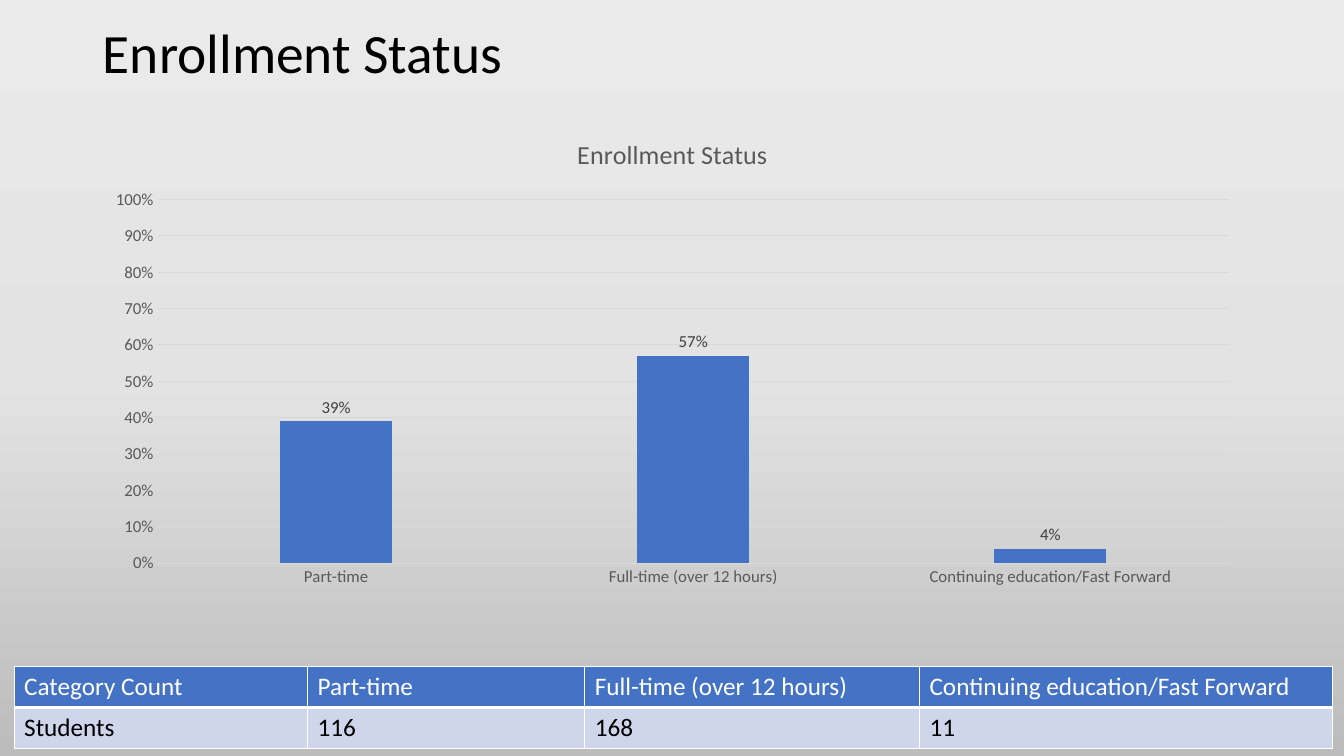
import pptx
import pptx.chart.data
import pptx.dml.color
import pptx.enum.chart
import pptx.enum.text
import pptx.oxml
import pptx.oxml.ns
import pptx.util

Inches = pptx.util.Inches
Pt = pptx.util.Pt
RGBColor = pptx.dml.color.RGBColor

FONT = "Calibri"
BLACK = RGBColor(0x00, 0x00, 0x00)
WHITE = RGBColor(0xFF, 0xFF, 0xFF)
BLUE = RGBColor(0x44, 0x72, 0xC4)
PALE_BLUE = RGBColor(0xCF, 0xD5, 0xEA)
GRID_GRAY = RGBColor(0xD9, 0xD9, 0xD9)
AXIS_GRAY = RGBColor(0x59, 0x59, 0x59)
LABEL_GRAY = RGBColor(0x40, 0x40, 0x40)
BACKGROUND_STOPS = [
    (0, RGBColor(0xEB, 0xEA, 0xEA)),
    (50, RGBColor(0xE4, 0xE3, 0xE3)),
    (100, RGBColor(0xBD, 0xBC, 0xBC)),
]

STATUSES = ["Part-time", "Full-time (over 12 hours)", "Continuing education/Fast Forward"]
SHARES = [0.39, 0.57, 0.04]
COUNTS = [116, 168, 11]


class EnrollmentSlide:
    """Holds the current slide and draws its elements in one style."""

    def __init__(self, presentation):
        self.slide = presentation.slides.add_slide(presentation.slide_layouts[5])

    def style(self, font, size, color):
        font.name = FONT
        font.size = Pt(size)
        font.bold = False
        font.color.rgb = color

    def background(self, stops):
        fill = self.slide.background.fill
        fill.gradient()
        fill.gradient_angle = 270
        ns = pptx.oxml.ns.nsdecls("a")
        marks = "".join(
            f'<a:gs pos="{percent * 1000}"><a:srgbClr val="{color}"/></a:gs>'
            for percent, color in stops
        )
        stop_list = next(self.slide.element.iter(pptx.oxml.ns.qn("a:gsLst")))
        stop_list.getparent().replace(
            stop_list, pptx.oxml.parse_xml(f"<a:gsLst {ns}>{marks}</a:gsLst>")
        )

    def title(self, text, left, top, width, height):
        heading = self.slide.shapes.title
        heading.left, heading.top = Inches(left), Inches(top)
        heading.width, heading.height = Inches(width), Inches(height)
        frame = heading.text_frame
        frame.text = text
        frame.auto_size = pptx.enum.text.MSO_AUTO_SIZE.NONE
        frame.vertical_anchor = pptx.enum.text.MSO_ANCHOR.MIDDLE
        paragraph = frame.paragraphs[0]
        paragraph.alignment = pptx.enum.text.PP_ALIGN.LEFT
        paragraph.line_spacing = 0.9
        self.style(paragraph.runs[0].font, 39.6, BLACK)

    def column_chart(self, title, categories, values, left, top, width, height):
        data = pptx.chart.data.CategoryChartData(number_format="0%")
        data.categories = categories
        data.add_series("Series 1", values)
        chart = self.slide.shapes.add_chart(
            pptx.enum.chart.XL_CHART_TYPE.COLUMN_CLUSTERED,
            Inches(left), Inches(top), Inches(width), Inches(height), data,
        ).chart
        self.style(chart.font, 10, BLACK)
        chart.has_legend = False
        chart.has_title = True
        chart.chart_title.include_in_layout = False
        chart.chart_title.text_frame.text = title
        title_run = chart.chart_title.text_frame.paragraphs[0].runs[0]
        self.style(title_run.font, 18.6, AXIS_GRAY)

        for axis in (chart.category_axis, chart.value_axis):
            axis.major_tick_mark = pptx.enum.chart.XL_TICK_MARK.NONE
            axis.minor_tick_mark = pptx.enum.chart.XL_TICK_MARK.NONE
            self.style(axis.tick_labels.font, 12, AXIS_GRAY)
        share_axis = chart.value_axis
        share_axis.minimum_scale, share_axis.maximum_scale = 0, 1
        share_axis.major_unit = 0.1
        share_axis.tick_labels.number_format = "0%"
        share_axis.tick_labels.number_format_is_linked = False
        share_axis.format.line.fill.background()
        for line in (chart.category_axis.format.line, share_axis.major_gridlines.format.line):
            line.color.rgb = GRID_GRAY
            line.width = Pt(0.75)

        plot = chart.plots[0]
        plot.gap_width, plot.overlap = 219, -27
        plot.vary_by_categories = False
        series = plot.series[0]
        series.format.fill.solid()
        series.format.fill.fore_color.rgb = BLUE
        labels = series.data_labels
        labels.show_value = True
        labels.number_format = "0%"
        labels.number_format_is_linked = False
        labels.position = pptx.enum.chart.XL_LABEL_POSITION.OUTSIDE_END
        self.style(labels.font, 12, LABEL_GRAY)

    def borders(self, cell, bottom):
        ns = pptx.oxml.ns.nsdecls("a")
        properties = cell._tc.get_or_add_tcPr()
        for index, (side, width) in enumerate(zip("LRTB", (1, 1, 1, bottom))):
            properties.insert(index, pptx.oxml.parse_xml(
                f'<a:ln{side} {ns} w="{Pt(width)}"><a:solidFill>'
                f'<a:srgbClr val="{WHITE}"/></a:solidFill></a:ln{side}>'
            ))

    def table(self, rows, left, top, column_widths, row_height):
        table = self.slide.shapes.add_table(
            len(rows), len(column_widths), Inches(left), Inches(top),
            Inches(sum(column_widths)), Inches(row_height * len(rows)),
        ).table
        for column, width in zip(table.columns, column_widths):
            column.width = Inches(width)
        for row_index, values in enumerate(rows):
            header = row_index == 0
            table.rows[row_index].height = Inches(row_height)
            for cell, value in zip(table.rows[row_index].cells, values):
                cell.text_frame.text = str(value)
                self.style(cell.text_frame.paragraphs[0].runs[0].font, 18,
                           WHITE if header else BLACK)
                cell.fill.solid()
                cell.fill.fore_color.rgb = BLUE if header else PALE_BLUE
                self.borders(cell, bottom=3 if header else 1)


def main():
    presentation = pptx.Presentation()
    presentation.slide_width = Inches(13.33)
    presentation.slide_height = Inches(7.5)
    enrollment = EnrollmentSlide(presentation)
    enrollment.background(BACKGROUND_STOPS)
    enrollment.title("Enrollment Status", 0.92, 0.22, 11.5, 0.67)
    enrollment.column_chart("Enrollment Status", STATUSES, SHARES, 0.92, 1.16, 11.5, 4.76)
    enrollment.table(
        [["Category Count", *STATUSES], ["Students", *COUNTS]],
        0.14, 6.61, [2.91, 2.75, 3.32, 4.1], 0.41,
    )
    presentation.save("out.pptx")


if __name__ == "__main__":
    main()
